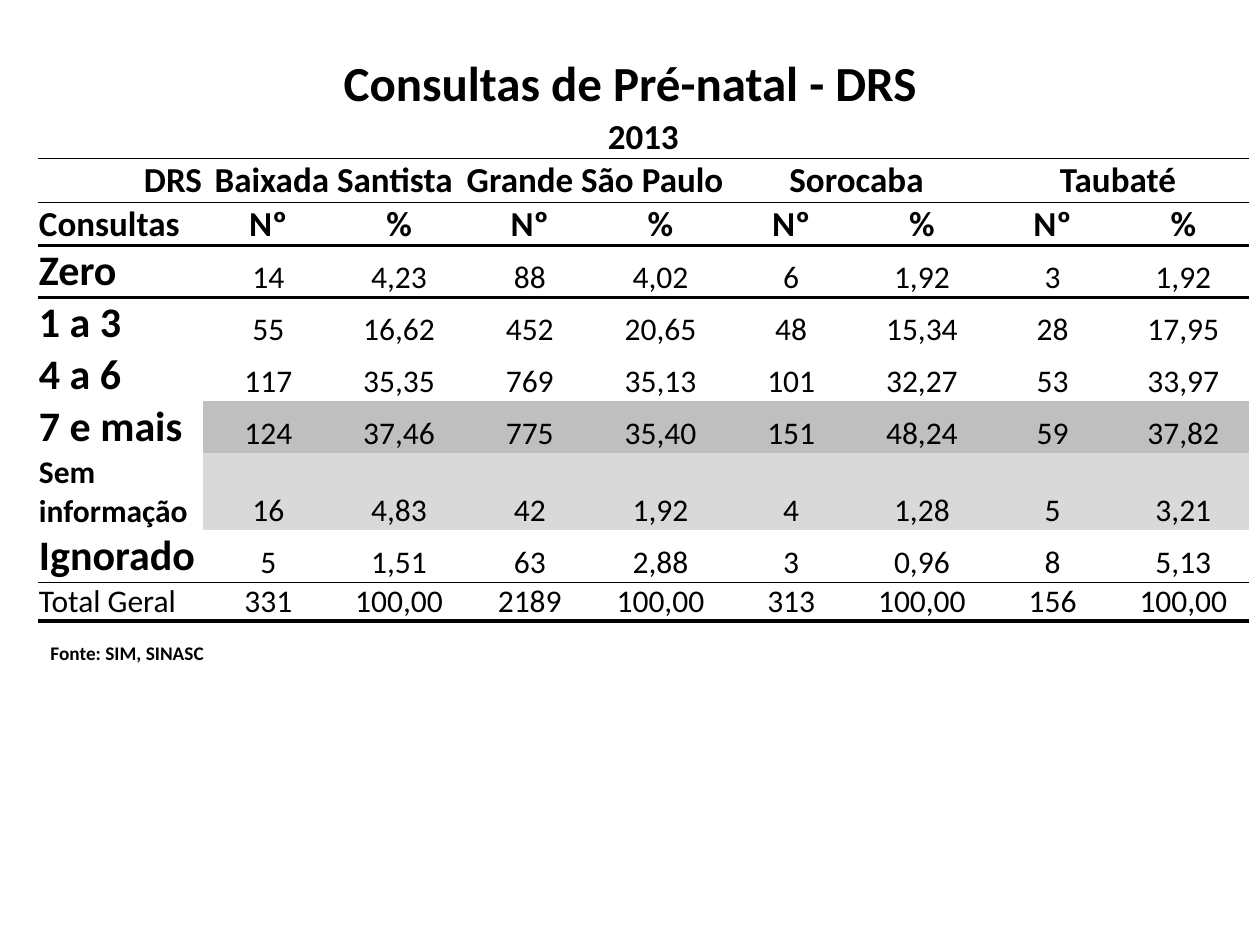
from lxml import etree
from pptx import Presentation
from pptx.dml.color import RGBColor
from pptx.enum.text import MSO_ANCHOR as Anchor, PP_ALIGN as Align
from pptx.oxml.ns import qn
from pptx.util import Pt

PX = 914400 // 126
BLACK = RGBColor(0x00, 0x00, 0x00)
GREY = RGBColor(0xBF, 0xBF, 0xBF)
PALE = RGBColor(0xD9, 0xD9, 0xD9)
PLAIN = "{2D5ABB26-0587-4C30-8999-92F81FD0307C}"  # no style, no grid

AREAS = ["Baixada Santista", "Grande São Paulo", "Sorocaba", "Taubaté"]
# label, label size, row height, fill, values
ROWS = [
    ("Zero", 24, 52, None, "14 4,23 88 4,02 6 1,92 3 1,92"),
    ("1 a 3", 24, 52, None, "55 16,62 452 20,65 48 15,34 28 17,95"),
    ("4 a 6", 24, 52, None, "117 35,35 769 35,13 101 32,27 53 33,97"),
    ("7 e mais", 24, 52, GREY, "124 37,46 775 35,40 151 48,24 59 37,82"),
    ("Sem informação", 18, 77, PALE, "16 4,83 42 1,92 4 1,28 5 3,21"),
    ("Ignorado", 24, 52, None, "5 1,51 63 2,88 3 0,96 8 5,13"),
    ("Total Geral", 18, 39, None,
     "331 100,00 2189 100,00 313 100,00 156 100,00"),
]
HEAD = [43, 44, 43]
TOTAL = len(HEAD) + len(ROWS) - 1
# row: (top, bottom) line widths in points
RULES = {0: (0, 0.5), 1: (0.5, 0), 2: (0, 2), 3: (2, 0),
         TOTAL - 1: (0, 0.5), TOTAL: (0.5, 2)}


class Deck:
    def __init__(self, wide, high, font):
        self.prs = Presentation()
        self.prs.slide_width, self.prs.slide_height = wide * PX, high * PX
        self.slide = self.prs.slides.add_slide(self.prs.slide_layouts[6])
        self.font = font

    def run(self, para, text, size, bold, align):
        para.alignment = align
        run = para.add_run()
        run.text = text
        font = run.font
        font.name, font.size, font.bold = self.font, Pt(size), bold
        font.color.rgb = BLACK

    def text(self, box, text, size, align=Align.LEFT, anchor=Anchor.TOP,
             wrap=True):
        shape = self.slide.shapes.add_textbox(*(v * PX for v in box))
        frame = shape.text_frame
        frame.word_wrap, frame.vertical_anchor = wrap, anchor
        self.run(frame.paragraphs[0], text, size, True, align)

    def table(self, left, top, wide, first, highs, cols):
        shape = self.slide.shapes.add_table(
            len(highs), cols, left * PX, top * PX, wide * PX, sum(highs) * PX)
        table = shape.table
        table.first_row = table.horz_banding = False
        next(shape.element.iter(qn("a:tableStyleId"))).text = PLAIN
        for row, high in zip(table.rows, highs):
            row.height = high * PX
        for i, col in enumerate(table.columns):
            col.width = (wide - first) * PX // (cols - 1) if i else first * PX
        return table

    def cell(self, cell, text, size, bold=False, align=Align.CENTER,
             anchor=Anchor.BOTTOM):
        cell.vertical_anchor = anchor
        cell.margin_left = cell.margin_right = cell.margin_top = PX
        cell.margin_bottom = 0
        self.run(cell.text_frame.paragraphs[0], text, size, bold, align)

    def paint(self, cell, fill, rules):
        """Set the fill and the top and bottom lines of a cell."""
        if fill is None:
            cell.fill.background()
        else:
            cell.fill.solid()
            cell.fill.fore_color.rgb = fill
        props = cell._tc.get_or_add_tcPr()
        spot = 0
        for tag, width in zip(("a:lnT", "a:lnB"), rules):
            if width:
                line = etree.Element(qn(tag), w=str(int(Pt(width))))
                solid = etree.SubElement(line, qn("a:solidFill"))
                etree.SubElement(solid, qn("a:srgbClr"), val=str(BLACK))
                props.insert(spot, line)
                spot += 1


def main():
    deck = Deck(1260, 945, "Calibri")
    deck.text((63, 38, 1134, 87), "Consultas de Pré-natal - DRS", 28,
              Align.CENTER, Anchor.MIDDLE)
    deck.text((38, 635, 180, 36), "Fonte: SIM, SINASC", 11, wrap=False)

    cols = 1 + 2 * len(AREAS)
    highs = HEAD + [row[2] for row in ROWS]
    table = deck.table(38, 115, 1211, 165, highs, cols)
    at = table.cell

    at(0, 0).merge(at(0, cols - 1))
    deck.cell(at(0, 0), "2013", 20, True)
    deck.cell(at(1, 0), "DRS", 20, True, Align.RIGHT)
    deck.cell(at(2, 0), "Consultas", 20, True, Align.LEFT)
    for i, area in enumerate(AREAS):
        c = 1 + 2 * i
        at(1, c).merge(at(1, c + 1))
        deck.cell(at(1, c), area, 20, True, anchor=Anchor.MIDDLE)
        for j, unit in enumerate(("Nº", "%")):
            deck.cell(at(2, c + j), unit, 20, True, anchor=Anchor.MIDDLE)

    for r, (label, size, _, _, values) in enumerate(ROWS, len(HEAD)):
        deck.cell(at(r, 0), label, size, r < TOTAL, Align.LEFT)
        for c, value in enumerate(values.split(), 1):
            deck.cell(at(r, c), value, 18)

    fills = [None] * len(HEAD) + [row[3] for row in ROWS]
    for r, fill in enumerate(fills):
        for c in range(cols):
            deck.paint(at(r, c), fill if c else None, RULES.get(r, (0, 0)))

    deck.prs.save("out.pptx")


if __name__ == "__main__":
    main()
